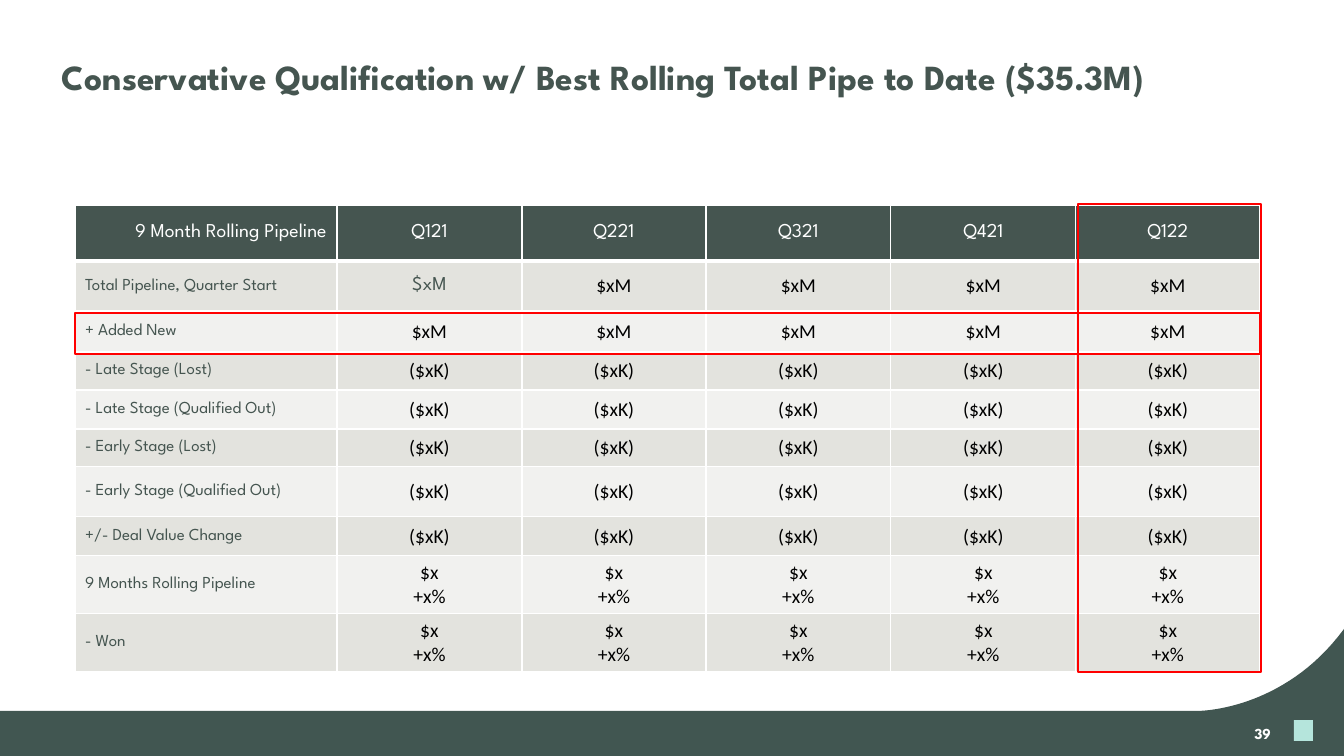
from lxml import etree
from pptx import Presentation
from pptx import util as u
from pptx.dml.color import RGBColor
from pptx.enum import shapes, text
from pptx.oxml.ns import qn

TITLE = "Conservative Qualification w/ Best Rolling Total Pipe to Date ($35.3M)"
PAGE = "39"
HEADER = ["9 Month Rolling Pipeline", "Q121", "Q221", "Q321", "Q421", "Q122"]
ROWS = [
    ("Total Pipeline, Quarter Start", "$xM", 50),
    ("+ Added New", "$xM", 41),
    ("- Late Stage (Lost)", "($xK)", 38),
    ("- Late Stage (Qualified Out)", "($xK)", 39),
    ("- Early Stage (Lost)", "($xK)", 38),
    ("- Early Stage (Qualified Out)", "($xK)", 50),
    ("+/- Deal Value Change", "($xK)", 39),
    ("9 Months Rolling Pipeline", "$x\n+x%", 58),
    ("- Won", "$x\n+x%", 58),
]
HEADER_H = 56
COLS = [262, 185, 184, 185, 185, 184]
LEFT, TOP = 75, 205
HIGHLIGHTS = [(1078, 204, 183, 468), (75, 313, 1185, 41)]
CURVE = [(1197, 711), (1197, 711), (1283, 712), (1344, 629)]
CURVE_STEPS = 32

BRAND, LABEL = "League Spartan", "455550"
WAVE, MINT, WHITE, BLACK, RED = "415651", "B5E5DC", "FFFFFF", "000000", "FF0000"
BANDS = ["E3E3DE", "F1F1EF"]
LEFT_AL, CENTER, RIGHT = text.PP_ALIGN.LEFT, text.PP_ALIGN.CENTER, text.PP_ALIGN.RIGHT


def px(n):
    return u.Emu(round(n * 914400 / 100.8))


def rgb(color):
    return RGBColor.from_string(color)


def write(tf, content, size=14, font=BRAND, color=LABEL, bold=False, align=LEFT_AL, spacing=None):
    tf.word_wrap = True
    tf.vertical_anchor = text.MSO_ANCHOR.MIDDLE
    for i, line in enumerate(content.split("\n")):
        p = tf.add_paragraph() if i else tf.paragraphs[0]
        p.alignment = align
        p.line_spacing = spacing
        r = p.add_run()
        r.text = line
        r.font.size, r.font.name, r.font.bold = u.Pt(size), font, bold
        r.font.color.rgb = rgb(color)


def style(sp, fill=None, line=None):
    sp.shadow.inherit = False
    if fill:
        sp.fill.solid()
        sp.fill.fore_color.rgb = rgb(fill)
    else:
        sp.fill.background()
    if line:
        sp.line.color.rgb = rgb(line)
        sp.line.width = u.Pt(1.75)
    else:
        sp.line.fill.background()


def style_cell(cell, fill, bottom=1):
    tcPr = cell._tc.get_or_add_tcPr()
    for side, width in (("L", 1), ("R", 1), ("T", 1), ("B", bottom)):
        ln = etree.SubElement(tcPr, qn("a:ln" + side), w=str(u.Pt(width)))
        etree.SubElement(etree.SubElement(ln, qn("a:solidFill")), qn("a:srgbClr"), val=WHITE)
    cell.fill.solid()
    cell.fill.fore_color.rgb = rgb(fill)
    cell.vertical_anchor = text.MSO_ANCHOR.MIDDLE


def bezier(points, t):
    weights = ((1 - t) ** 3, 3 * t * (1 - t) ** 2, 3 * t * t * (1 - t), t ** 3)
    return tuple(px(sum(w * q[axis] for w, q in zip(weights, points))) for axis in (0, 1))


def add_footer(s):
    curve = [bezier(CURVE, i / CURVE_STEPS) for i in range(CURVE_STEPS + 1)]
    fb = s.shapes.build_freeform(px(1344), px(756))
    fb.add_line_segments([(0, px(756)), (0, px(711))] + curve, close=True)
    style(fb.convert_to_shape(), WAVE)
    mark = s.shapes.add_shape(shapes.MSO_SHAPE.RECTANGLE, px(1294), px(720), px(19), px(21))
    style(mark, MINT)
    tb = s.shapes.add_textbox(px(979), px(713), px(302), px(40))
    write(tb.text_frame, PAGE, size=10.9, color=WHITE, bold=True, align=RIGHT)


def add_title(s):
    sp = s.shapes.title
    sp.left, sp.top, sp.width, sp.height = px(62), px(50), px(1219), px(58)
    tf = sp.text_frame
    tf.margin_left = 0
    tf.auto_size = text.MSO_AUTO_SIZE.NONE
    write(tf, TITLE, size=25.2, bold=True, spacing=0.9)


def add_pipeline(s):
    heights = [HEADER_H] + [h for _, _, h in ROWS]
    frame = s.shapes.add_table(len(heights), len(COLS), px(LEFT), px(TOP),
                               px(sum(COLS)), px(sum(heights)))
    table = frame.table
    table.first_row = table.horz_banding = False
    for col, width in zip(table.columns, COLS):
        col.width = px(width)
    for row, height in zip(table.rows, heights):
        row.height = px(height)
    for c, name in enumerate(HEADER):
        cell = table.cell(0, c)
        write(cell.text_frame, name, color=WHITE, align=CENTER if c else RIGHT)
        style_cell(cell, LABEL, bottom=3)
    for r, (label, value, _) in enumerate(ROWS, 1):
        for c in range(len(COLS)):
            cell = table.cell(r, c)
            if c == 0:
                write(cell.text_frame, label, size=12)
            elif (r, c) == (1, 1):
                write(cell.text_frame, value, align=CENTER)
            else:
                write(cell.text_frame, value, font="Calibri", color=BLACK, align=CENTER)
            style_cell(cell, BANDS[(r - 1) % 2])


def main():
    prs = Presentation()
    prs.slide_width, prs.slide_height = px(1344), px(756)
    s = prs.slides.add_slide(prs.slide_layouts[5])
    add_footer(s)
    add_title(s)
    add_pipeline(s)
    for box in HIGHLIGHTS:
        sp = s.shapes.add_shape(shapes.MSO_SHAPE.RECTANGLE, *map(px, box))
        style(sp, line=RED)
    prs.save("out.pptx")


if __name__ == "__main__":
    main()
